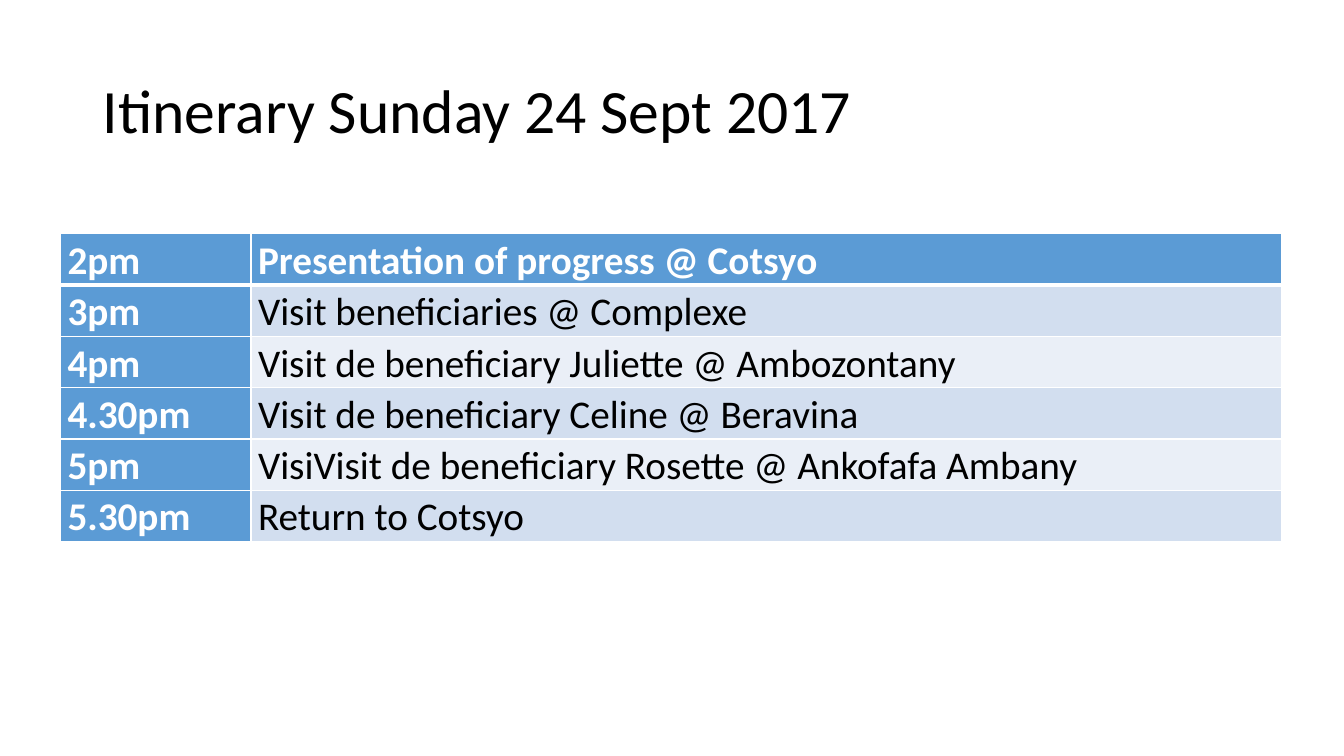
"""Build the Sunday itinerary slide with its timetable."""
import pptx
import pptx.dml.color
import pptx.enum.text
import pptx.oxml.ns
import pptx.util
from lxml import etree

Inches = pptx.util.Inches
Pt = pptx.util.Pt
RGBColor = pptx.dml.color.RGBColor

FONT = "Calibri"
WHITE = RGBColor(0xFF, 0xFF, 0xFF)
BLACK = RGBColor(0x00, 0x00, 0x00)
BLUE = RGBColor(0x5B, 0x9B, 0xD5)
BAND_COLORS = (RGBColor(0xEA, 0xEF, 0xF7), RGBColor(0xD2, 0xDE, 0xEF))

ITINERARY = (
    ("2pm", "Presentation of progress @ Cotsyo"),
    ("3pm", "Visit beneficiaries @ Complexe"),
    ("4pm", "Visit de beneficiary Juliette @ Ambozontany"),
    ("4.30pm", "Visit de beneficiary Celine @ Beravina"),
    ("5pm", "VisiVisit de beneficiary Rosette @ Ankofafa Ambany"),
    ("5.30pm", "Return to Cotsyo"),
)
COLUMN_WIDTHS = (Inches(1.89), Inches(10.22))
ROW_HEIGHT = Inches(0.48)


def format_paragraph(paragraph, size, color, line_spacing, bold=False):
    paragraph.alignment = pptx.enum.text.PP_ALIGN.LEFT
    paragraph.line_spacing = line_spacing
    font = paragraph.font
    font.name = FONT
    font.size = Pt(size)
    font.bold = bold
    font.color.rgb = color


def add_title(slide, text):
    title = slide.shapes.title
    title.left, title.top = Inches(0.92), Inches(0.4)
    title.width, title.height = Inches(11.5), Inches(1.45)
    frame = title.text_frame
    frame.text = text
    frame.auto_size = pptx.enum.text.MSO_AUTO_SIZE.NONE
    frame.vertical_anchor = pptx.enum.text.MSO_ANCHOR.MIDDLE
    format_paragraph(frame.paragraphs[0], 44, BLACK, 0.9)


def add_cell_borders(cell, row_index):
    widths = {
        "lnL": 1,
        "lnR": 1,
        "lnT": 3 if row_index == 1 else 1,
        "lnB": 3 if row_index == 0 else 1,
    }
    qualified = pptx.oxml.ns.qn
    properties = cell._tc.get_or_add_tcPr()
    for side, width in widths.items():
        line = etree.SubElement(properties, qualified(f"a:{side}"), w=str(Pt(width)))
        fill = etree.SubElement(line, qualified("a:solidFill"))
        etree.SubElement(fill, qualified("a:srgbClr"), val=str(WHITE))


def fill_cell(cell, text, row_index, column_index):
    is_heading = row_index == 0 or column_index == 0
    cell.margin_left = cell.margin_right = Inches(0.07)
    cell.margin_top = cell.margin_bottom = 0
    cell.text = text
    format_paragraph(
        cell.text_frame.paragraphs[0], 28,
        WHITE if is_heading else BLACK, 1.07, bold=is_heading,
    )
    add_cell_borders(cell, row_index)
    cell.fill.solid()
    cell.fill.fore_color.rgb = BLUE if is_heading else BAND_COLORS[row_index % 2]


def add_itinerary_table(slide, itinerary):
    table = slide.shapes.add_table(
        len(itinerary), len(COLUMN_WIDTHS), Inches(0.6), Inches(2.32),
        sum(COLUMN_WIDTHS), ROW_HEIGHT * len(itinerary),
    ).table
    table.first_col = True
    for column, width in zip(table.columns, COLUMN_WIDTHS):
        column.width = width
    for row_index, entry in enumerate(itinerary):
        table.rows[row_index].height = ROW_HEIGHT
        for column_index, text in enumerate(entry):
            fill_cell(table.cell(row_index, column_index), text, row_index, column_index)


def main():
    presentation = pptx.Presentation()
    presentation.slide_width = Inches(13.33)
    presentation.slide_height = Inches(7.5)
    slide = presentation.slides.add_slide(presentation.slide_layouts[5])
    add_title(slide, "Itinerary Sunday 24 Sept 2017")
    add_itinerary_table(slide, ITINERARY)
    presentation.save("out.pptx")


if __name__ == "__main__":
    main()
